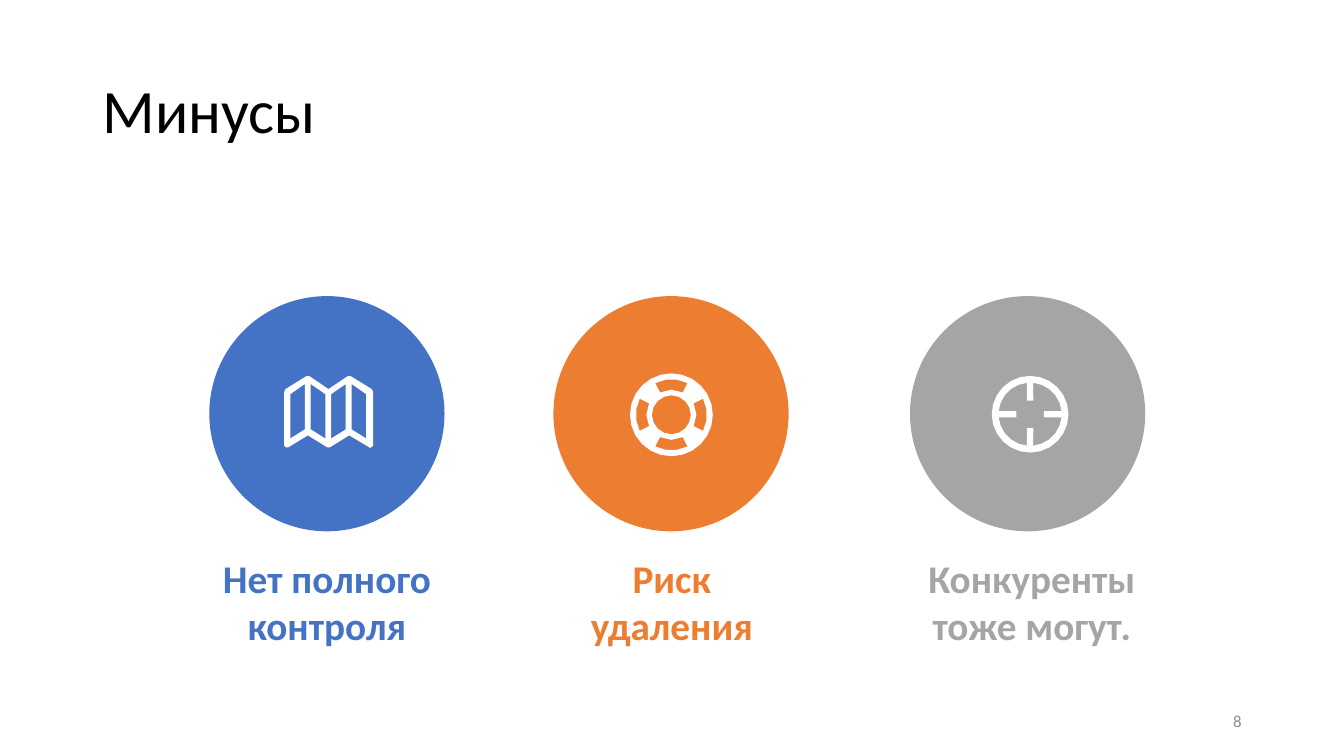
from math import asin, cos, degrees, radians, sin

from pptx import Presentation
from pptx.dml.color import RGBColor
from pptx.enum.shapes import MSO_SHAPE
from pptx.enum.text import MSO_ANCHOR, MSO_AUTO_SIZE, PP_ALIGN
from pptx.util import Pt

OVAL = MSO_SHAPE.OVAL
MIDDLE = MSO_ANCHOR.MIDDLE
GROW = MSO_AUTO_SIZE.SHAPE_TO_FIT_TEXT
LEFT, CENTER, RIGHT = PP_ALIGN.LEFT, PP_ALIGN.CENTER, PP_ALIGN.RIGHT

BLACK = RGBColor(0x00, 0x00, 0x00)
WHITE = RGBColor(0xFF, 0xFF, 0xFF)
BLUE = RGBColor(0x44, 0x72, 0xC4)
ORANGE = RGBColor(0xED, 0x7D, 0x31)
GRAY = RGBColor(0xA5, 0xA5, 0xA5)
DIM = RGBColor(0x8C, 0x8C, 0x8C)

FONT = "Calibri"
DISC_TOP, DISC_SIZE = 211.5, 168
LABEL_TOP, LABEL_HIGH = 392.4, 75

DISCS = [(149.5, BLUE), (395.3, ORANGE), (650, GRAY)]

# Left, width, colour, wording
LABELS = [
    (414, 131.8, ORANGE, "Риск\nудаления"),
    (653.8, 166.3, GRAY, "Конкуренты\nтоже могут."),
    (151.4, 164.2, BLUE, "Нет полного\nконтроля"),
]


def write(frame, text, size, color, align, bold=False):
    frame.text = text
    for line in frame.paragraphs:
        line.alignment = align
        for run in line.runs:
            font = run.font
            font.name, font.size, font.bold = FONT, Pt(size), bold
            font.color.rgb = color


def paint(shape, color):
    shape.fill.solid()
    shape.fill.fore_color.rgb = color
    shape.line.fill.background()
    shape.shadow.inherit = False


def add_title(slide, text):
    title = slide.shapes.title
    title.left, title.top = Pt(66), Pt(28.8)
    title.width, title.height = Pt(828), Pt(104.4)
    write(title.text_frame, text, 44, BLACK, LEFT)
    title.text_frame.vertical_anchor = MIDDLE
    title.text_frame.paragraphs[0].line_spacing = 0.9


def add_number(slide, text):
    box = slide.shapes.add_textbox(Pt(678), Pt(500.5), Pt(216), Pt(28.8))
    box.text_frame.word_wrap = True
    box.text_frame.vertical_anchor = MIDDLE
    write(box.text_frame, text, 12, DIM, RIGHT)


def add_disc(slide, left, color):
    disc = slide.shapes.add_shape(
        OVAL, Pt(left), Pt(DISC_TOP), Pt(DISC_SIZE), Pt(DISC_SIZE))
    paint(disc, color)


def add_label(slide, left, width, color, text):
    box = slide.shapes.add_textbox(
        Pt(left), Pt(LABEL_TOP), Pt(width), Pt(LABEL_HIGH))
    box.text_frame.word_wrap = False
    box.text_frame.auto_size = GROW
    write(box.text_frame, text, 28, color, CENTER, bold=True)


def add_icon(slide, rings):
    """Draw closed rings as one white shape; inner rings become holes."""
    rings = [[(Pt(x), Pt(y)) for x, y in ring] for ring in rings]
    pen = slide.shapes.build_freeform(*rings[0][0], scale=1.0)
    pen.add_line_segments(rings[0][1:])
    for ring in rings[1:]:
        pen.move_to(*ring[0])
        pen.add_line_segments(ring[1:])
    paint(pen.convert_to_shape(), WHITE)


def arc(mid, radius, start, end, steps):
    turns = [radians(start + (end - start) * i / steps)
             for i in range(steps + 1)]
    return [(mid[0] + radius * cos(t), mid[1] + radius * sin(t))
            for t in turns]


def circle(mid, radius, steps):
    return arc(mid, radius, 0, 360, steps)[:-1]


def add_map(slide):
    edge = [(203, 280), (204, 277.9), (219, 268.6), (221, 268.6),
            (234.7, 277.9), (248.5, 268.6), (250.5, 268.6),
            (265.6, 277.9), (266.6, 280), (266.6, 318.2),
            (264.6, 320), (249.5, 311), (235.7, 319.5), (233.7, 319.5),
            (220, 311), (206, 319.5), (204, 319.5), (203, 318.2)]
    rings = [edge]
    for i in range(4):
        left = 207.4 + 14.6 * i
        right = left + 10.4
        low, high = (left, right) if i % 2 == 0 else (right, left)
        rings.append([(low, 281.5), (high, 274.3),
                      (high, 306.7), (low, 313.2)])
    add_icon(slide, rings)


def add_sight(slide):
    mid, radius, half, tip = (735.8, 295.9), 22.6, 2.2, 9.8
    gap = degrees(asin(half / radius))
    reach, tilt = (half ** 2 + tip ** 2) ** 0.5, degrees(asin(half / tip))
    hole = []
    for turn in range(0, 360, 90):
        hole += arc(mid, radius, turn + gap, turn + 90 - gap, 5)
        hole += arc(mid, reach, turn + 90 - tilt, turn + 90 + tilt, 1)
    add_icon(slide, [circle(mid, 27.4, 24), hole])


def add_buoy(slide):
    mid = (479.6, 296.3)
    rings = [circle(mid, 29.6, 24), circle(mid, 13.9, 16)]
    for turn in range(0, 360, 90):
        rings.append(arc(mid, 25.4, turn - 27, turn + 27, 3)
                     + arc(mid, 17.9, turn + 27, turn - 27, 2))
    add_icon(slide, rings)


def main():
    deck = Presentation()
    deck.slide_width, deck.slide_height = Pt(960), Pt(540)
    slide = deck.slides.add_slide(deck.slide_layouts[5])

    # Title and page number
    add_title(slide, "Минусы")
    add_number(slide, "8")

    # Discs and labels
    for disc in DISCS:
        add_disc(slide, *disc)
    for label in LABELS:
        add_label(slide, *label)

    # Icons
    add_map(slide)
    add_sight(slide)
    add_buoy(slide)

    deck.save("out.pptx")


if __name__ == "__main__":
    main()
